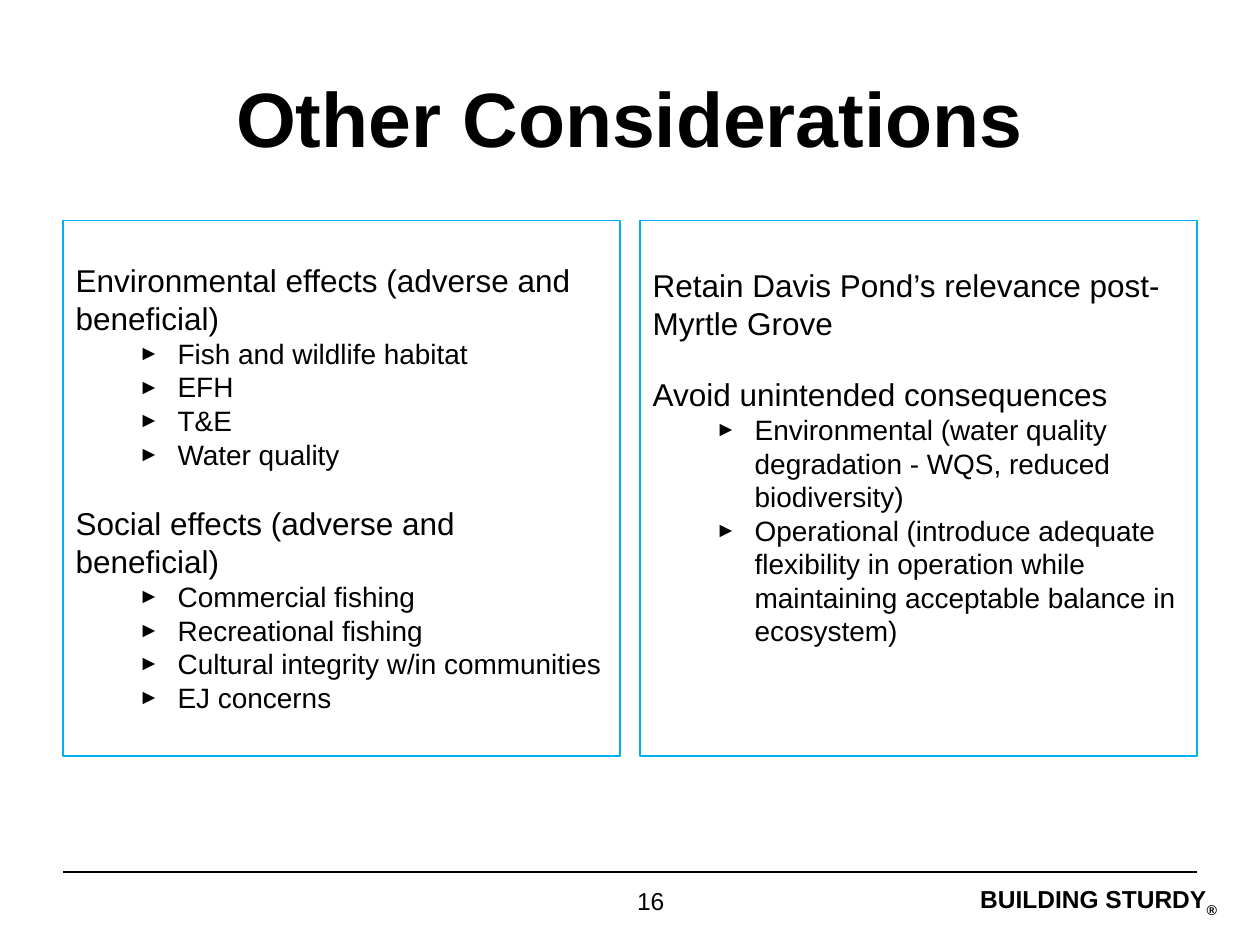
from lxml import etree
from pptx import Presentation
from pptx.dml.color import RGBColor
from pptx.enum.shapes import MSO_CONNECTOR
from pptx.enum.text import MSO_ANCHOR, MSO_AUTO_SIZE, PP_ALIGN
from pptx.oxml.ns import qn
from pptx.util import Inches, Pt

LEFT, CENTER, RIGHT = PP_ALIGN.LEFT, PP_ALIGN.CENTER, PP_ALIGN.RIGHT
TOP, MIDDLE = MSO_ANCHOR.TOP, MSO_ANCHOR.MIDDLE
NO_AUTOFIT = MSO_AUTO_SIZE.NONE
STRAIGHT = MSO_CONNECTOR.STRAIGHT
TWO_CONTENT = 3
BLACK, CYAN = "000000", "00B0F0"
HEADING, BULLET = 18, 16
GROUP_GAP = 19

EFFECTS = [
    ("Environmental effects (adverse and beneficial)",
     ["Fish and wildlife habitat", "EFH", "T&E", "Water quality"]),
    ("Social effects (adverse and beneficial)",
     ["Commercial fishing", "Recreational fishing",
      "Cultural integrity w/in communities", "EJ concerns"]),
]
GOALS = [
    ("Retain Davis Pond’s relevance post-Myrtle Grove", []),
    ("Avoid unintended consequences",
     ["Environmental (water quality degradation - WQS, reduced biodiversity)",
      "Operational (introduce adequate flexibility in operation while "
      "maintaining acceptable balance in ecosystem)"]),
]


def color(value):
    return RGBColor.from_string(value)


def apply(target, **values):
    for name, value in values.items():
        setattr(target, name, value)


def place(sp, left, top, width, height):
    apply(sp, left=Inches(left), top=Inches(top),
          width=Inches(width), height=Inches(height))


def add_run(p, text, size, bold=False):
    r = p.add_run()
    r.text = text
    apply(r.font, name="Arial", size=Pt(size), bold=bold)
    r.font.color.rgb = color(BLACK)
    return r


def set_indent(p, left, hanging, bullet=None):
    pPr = p._p.get_or_add_pPr()
    pPr.set("marL", str(Inches(left)))
    pPr.set("indent", str(-Inches(hanging)))
    if bullet:
        etree.SubElement(pPr, qn("a:buSzPct"), val="75000")
        etree.SubElement(pPr, qn("a:buChar"), char=bullet)
    else:
        etree.SubElement(pPr, qn("a:buNone"))


def add_title(s, text):
    sp = s.shapes.title
    place(sp, 0.5, 0.3, 9, 1.25)
    tf = sp.text_frame
    apply(tf, vertical_anchor=MIDDLE, auto_size=NO_AUTOFIT)
    tf.paragraphs[0].alignment = CENTER
    add_run(tf.paragraphs[0], text, 44, bold=True)


def fill_panel(sp, left, top_inset, groups):
    """Format a body placeholder as a framed panel of headings and bullets."""
    place(sp, left, 1.75, 4.42, 4.25)
    sp.line.color.rgb = color(CYAN)
    sp.line.width = Pt(0.75)
    tf = sp.text_frame
    apply(tf, word_wrap=True, auto_size=NO_AUTOFIT, vertical_anchor=TOP,
          margin_top=Inches(top_inset), margin_right=Inches(0.13))
    rows = []
    for i, (heading, bullets) in enumerate(groups):
        rows.append((heading, 0, HEADING, GROUP_GAP if i else 0))
        rows += [(text, 1, BULLET, 0) for text in bullets]
    for i, (text, level, size, before) in enumerate(rows):
        p = tf.add_paragraph() if i else tf.paragraphs[0]
        if level:
            set_indent(p, 0.81, 0.31, "►")
        else:
            set_indent(p, 0, 0)
        apply(p, level=level, alignment=LEFT, space_before=Pt(before),
              line_spacing=Pt(size * 1.2))
        add_run(p, text, size)


def add_label(s, box, text, align, bold=False, inset=0.0):
    sp = s.shapes.add_textbox(*map(Inches, box))
    tf = sp.text_frame
    tf.word_wrap = True
    for side in ("left", "right", "top", "bottom"):
        setattr(tf, f"margin_{side}", Inches(inset))
    p = tf.paragraphs[0]
    p.alignment = align
    add_run(p, text, 14, bold)
    return p


def add_rule(s, left, right, y):
    line = s.shapes.add_connector(STRAIGHT, Inches(left), Inches(y),
                                  Inches(right), Inches(y))
    line.line.color.rgb = color(BLACK)
    line.line.width = Pt(0.75)
    etree.SubElement(line._element.spPr, qn("a:effectLst"))


def main():
    prs = Presentation()
    apply(prs, slide_width=Inches(10), slide_height=Inches(7.5))
    s = prs.slides.add_slide(prs.slide_layouts[TWO_CONTENT - 0])
    add_title(s, "Other Considerations")
    effects, goals = list(s.placeholders)[1:3]
    fill_panel(effects, 0.5, 0.32, EFFECTS)
    fill_panel(goals, 5.08, 0.36, GOALS)
    add_rule(s, 0.5, 9.5, 6.92)
    add_label(s, (4, 6.98, 2.33, 0.52), "16", CENTER, inset=0.05)
    slogan = add_label(s, (6.81, 7.02, 2.85, 0.23), "BUILDING STURDY", RIGHT, bold=True)
    mark = add_run(slogan, "®", 14, bold=True)
    mark._r.get_or_add_rPr().set("baseline", "-25000")
    prs.save("out.pptx")


if __name__ == "__main__":
    main()
